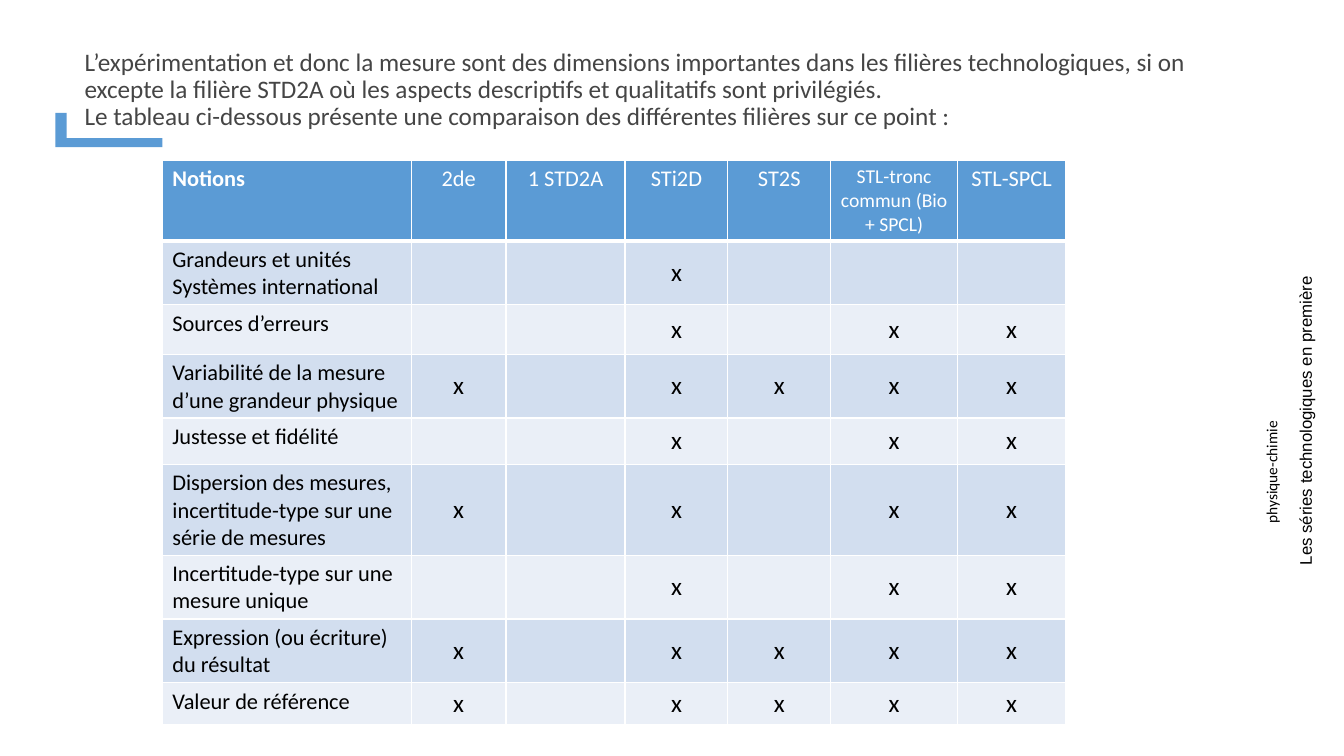
"""Build the slide comparing how measurement is taught across technological streams."""
import pptx
import pptx.dml.color
import pptx.enum.shapes
import pptx.enum.text
import pptx.util
from lxml import etree
from pptx.oxml.ns import qn

Inches = pptx.util.Inches
RGBColor = pptx.dml.color.RGBColor
ALIGN = pptx.enum.text.PP_ALIGN
ANCHOR = pptx.enum.text.MSO_ANCHOR

BLUE = RGBColor(0x5B, 0x9B, 0xD5)
BAND_DARK = RGBColor(0xD2, 0xDE, 0xEF)
BAND_LIGHT = RGBColor(0xEA, 0xEF, 0xF7)
WHITE = RGBColor(0xFF, 0xFF, 0xFF)
BLACK = RGBColor(0, 0, 0)
GREY = RGBColor(0x45, 0x45, 0x45)

INTRODUCTION = (
    "L’expérimentation et donc la mesure sont des dimensions importantes dans les filières "
    "technologiques, si on excepte la filière STD2A où les aspects descriptifs et qualitatifs "
    "sont privilégiés.\v"
    "Le tableau ci-dessous présente une comparaison des différentes filières sur ce point :"
)
SUBJECT = "physique-chimie"
SERIES = "Les séries technologiques en première"

HEADINGS = ["Notions", "2de", "1 STD2A", "STi2D", "ST2S",
            "STL-tronc commun (Bio + SPCL)", "STL-SPCL"]
COLUMN_WIDTHS = [2.47, 0.94, 1.18, 1.02, 1.02, 1.26, 1.07]
HEADER_HEIGHT = 0.8
NOTIONS = [
    ("Grandeurs et unités\nSystèmes international", 0.63, ["STi2D"]),
    ("Sources d’erreurs", 0.49, ["STi2D", *HEADINGS[5:]]),
    ("Variabilité de la mesure d’une grandeur physique", 0.63, ["2de", *HEADINGS[3:]]),
    ("Justesse et fidélité", 0.46, ["STi2D", *HEADINGS[5:]]),
    ("Dispersion des mesures, incertitude-type sur une série de mesures", 0.9,
     ["2de", "STi2D", *HEADINGS[5:]]),
    ("Incertitude-type sur une mesure unique", 0.63, ["STi2D", *HEADINGS[5:]]),
    ("Expression (ou écriture) du résultat", 0.63, ["2de", *HEADINGS[3:]]),
    ("Valeur de référence", 0.41, ["2de", *HEADINGS[3:]]),
]


def write(frame, text, size=16, color=BLACK, font="Calibri", bold=False,
          align=ALIGN.LEFT, spacing=None):
    frame.text = text
    for para in frame.paragraphs:
        para.alignment = align
        para.line_spacing = spacing
        for span in para.runs:
            span.font.size = pptx.util.Pt(size)
            span.font.name = font
            span.font.bold = bold
            span.font.color.rgb = color


def add_label(page, place, text, rotation=0, wrap=True, anchor=ANCHOR.MIDDLE, **style):
    box = page.shapes.add_textbox(*map(Inches, place))
    box.rotation = rotation
    frame = box.text_frame
    frame.word_wrap = wrap
    frame.vertical_anchor = anchor
    write(frame, text, **style)
    return box


def paint_cell(cell, color, bottom=1):
    properties = cell._tc.get_or_add_tcPr()
    for side, points in (("L", 1), ("R", 1), ("T", 1), ("B", bottom)):
        line = etree.SubElement(properties, qn(f"a:ln{side}"), w=str(pptx.util.Pt(points)))
        fill = etree.SubElement(line, qn("a:solidFill"))
        etree.SubElement(fill, qn("a:srgbClr"), val=str(WHITE))
    cell.fill.solid()
    cell.fill.fore_color.rgb = color


def add_corner(page):
    corner = page.shapes.add_shape(pptx.enum.shapes.MSO_SHAPE.CORNER,
                                   *map(Inches, (0.91, 0.76, 0.34, 1.06)))
    corner.adjustments[0] = 0.325
    corner.adjustments[1] = 0.262
    corner.rotation = 270
    corner.element.spPr.xfrm.set("flipV", "1")
    corner.shadow.inherit = False
    corner.fill.solid()
    corner.fill.fore_color.rgb = BLUE
    corner.line.fill.background()


def add_comparison(page):
    heights = [HEADER_HEIGHT] + [height for _, height, _ in NOTIONS]
    table = page.shapes.add_table(len(heights), len(HEADINGS), Inches(1.61), Inches(1.59),
                                  Inches(sum(COLUMN_WIDTHS)), Inches(sum(heights))).table
    for column, width in zip(table.columns, COLUMN_WIDTHS):
        column.width = Inches(width)
    for row, height in zip(table.rows, heights):
        row.height = Inches(height)
    for index, heading in enumerate(HEADINGS):
        cell = table.cell(0, index)
        paint_cell(cell, BLUE, bottom=3)
        write(cell.text_frame, heading, color=WHITE, bold=index == 0,
              size=14 if index == 5 else 16,
              align=ALIGN.CENTER if index else ALIGN.LEFT)
    for number, (notion, _, streams) in enumerate(NOTIONS, start=1):
        for index, heading in enumerate(HEADINGS):
            cell = table.cell(number, index)
            paint_cell(cell, BAND_DARK if number % 2 else BAND_LIGHT)
            if index == 0:
                write(cell.text_frame, notion)
            elif heading in streams:
                cell.vertical_anchor = ANCHOR.MIDDLE
                write(cell.text_frame, "x", size=18, align=ALIGN.CENTER)


def main():
    deck = pptx.Presentation()
    deck.slide_width = Inches(13.33)
    deck.slide_height = Inches(7.5)
    page = deck.slides.add_slide(deck.slide_layouts[6])
    add_label(page, (0.74, 0.33, 11.23, 1.13), INTRODUCTION, size=18, color=GREY, spacing=0.9)
    add_corner(page)
    add_label(page, (11.63, 4.54, 1.98, 0.29), SUBJECT, rotation=270, size=11,
              align=ALIGN.CENTER, spacing=0.9)
    series = add_label(page, (11.38, 3.99, 3.13, 0.3), SERIES, rotation=270, wrap=False,
                       anchor=ANCHOR.TOP, size=12, font="Arial")
    series.text_frame.auto_size = pptx.enum.text.MSO_AUTO_SIZE.SHAPE_TO_FIT_TEXT
    add_comparison(page)
    deck.save("out.pptx")


if __name__ == "__main__":
    main()
